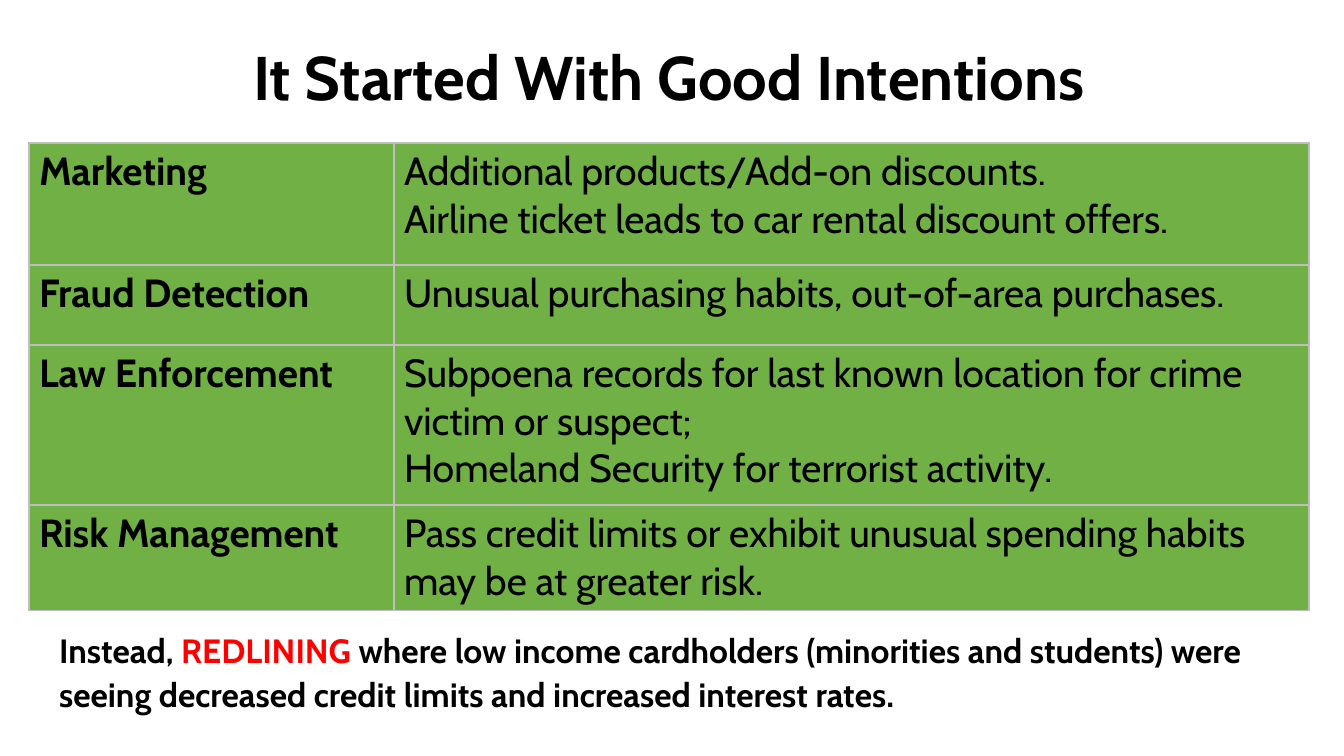
from pptx import Presentation
from pptx.dml.color import RGBColor as Color
from pptx.enum.text import MSO_ANCHOR as Anchor, MSO_AUTO_SIZE as AutoSize, PP_ALIGN as Align
from pptx.oxml import parse_xml
from pptx.oxml.ns import nsdecls
from pptx.util import Pt

COLORS = {"ink": "000000", "alert": "FF0000", "cell": "70B044", "border": "BFBFBF"}
EMU_PER_PX = 914400 / 100.8
PAGE_SIZE = (1344, 756)
USES = [
    ("Marketing", "Additional products/Add-on discounts.\n"
                  "Airline ticket leads to car rental discount offers."),
    ("Fraud Detection", "Unusual purchasing habits, out-of-area purchases."),
    ("Law Enforcement", "Subpoena records for last known location for crime victim or suspect;\n"
                        "Homeland Security for terrorist activity."),
    ("Risk Management", "Pass credit limits or exhibit unusual spending habits may be at greater risk."),
]


def px(length):
    return round(length * EMU_PER_PX)


def write(para, text, size=28, color="ink", bold=False, font="Cabin"):
    for index, line in enumerate(text.split("\n")):
        if index:
            para.add_line_break()
        span = para.add_run()
        span.text = line
        span.font.name = font
        span.font.size = Pt(size)
        span.font.bold = bold
        span.font.color.rgb = Color.from_string(COLORS[color])


class SlideBuilder:
    def __init__(self, deck):
        self.page = deck.slides.add_slide(deck.slide_layouts[1])

    def place(self, box, left, top, width, height, anchor):
        box.left, box.top, box.width, box.height = map(px, (left, top, width, height))
        frame = box.text_frame
        frame.word_wrap = True
        frame.auto_size = AutoSize.NONE
        frame.vertical_anchor = anchor
        return frame.paragraphs[0]

    def title(self, text, *area):
        para = self.place(self.page.shapes.title, *area, Anchor.MIDDLE)
        para.alignment = Align.CENTER
        para.line_spacing = 0.9
        write(para, text, size=44, bold=True)

    def body(self, spans, *area):
        para = self.place(self.page.placeholders[1], *area, Anchor.TOP)
        para.alignment = Align.LEFT
        para.line_spacing = 1.1
        para.space_before = Pt(0)
        para.space_after = Pt(12)
        properties = para._p.get_or_add_pPr()
        properties.set("marL", "0")
        properties.set("indent", "0")
        properties.append(parse_xml(f"<a:buNone {nsdecls('a')}/>"))
        for text, color in spans:
            write(para, text, size=24, color=color, bold=True)

    def table(self, rows, left, top, widths, heights):
        area = map(px, (left, top, sum(widths), sum(heights)))
        table = self.page.shapes.add_table(len(rows), len(widths), *area).table
        table.first_row = table.horz_banding = False
        for column, width in zip(table.columns, widths):
            column.width = px(width)
        for row, height, texts in zip(table.rows, heights, rows):
            row.height = px(height)
            for index, (cell, text) in enumerate(zip(row.cells, texts)):
                self.fill_cell(cell, text, bold=index == 0)

    def fill_cell(self, cell, text, bold):
        para = cell.text_frame.paragraphs[0]
        para.space_after = Pt(12)
        write(para, text, bold=bold)
        properties = cell._tc.get_or_add_tcPr()
        for side in ("lnL", "lnR", "lnT", "lnB"):
            properties.append(parse_xml(
                f'<a:{side} {nsdecls("a")} w="{Pt(1)}"><a:solidFill>'
                f'<a:srgbClr val="{COLORS["border"]}"/></a:solidFill></a:{side}>'))
        cell.fill.solid()
        cell.fill.fore_color.rgb = Color.from_string(COLORS["cell"])


def main():
    deck = Presentation()
    deck.slide_width, deck.slide_height = map(px, PAGE_SIZE)
    slide = SlideBuilder(deck)
    slide.title("It Started With Good Intentions", 29, 17, 1280, 127)
    slide.body([
        ("Instead, ", "ink"),
        ("REDLINING", "alert"),
        (" where low income cardholders (minorities and students) were seeing "
         "decreased credit limits and increased interest rates.", "ink"),
    ], 49, 621, 1245, 115)
    slide.table(USES, 29, 143, widths=(365, 915), heights=(122, 80, 160, 100))
    deck.save("out.pptx")


if __name__ == "__main__":
    main()
